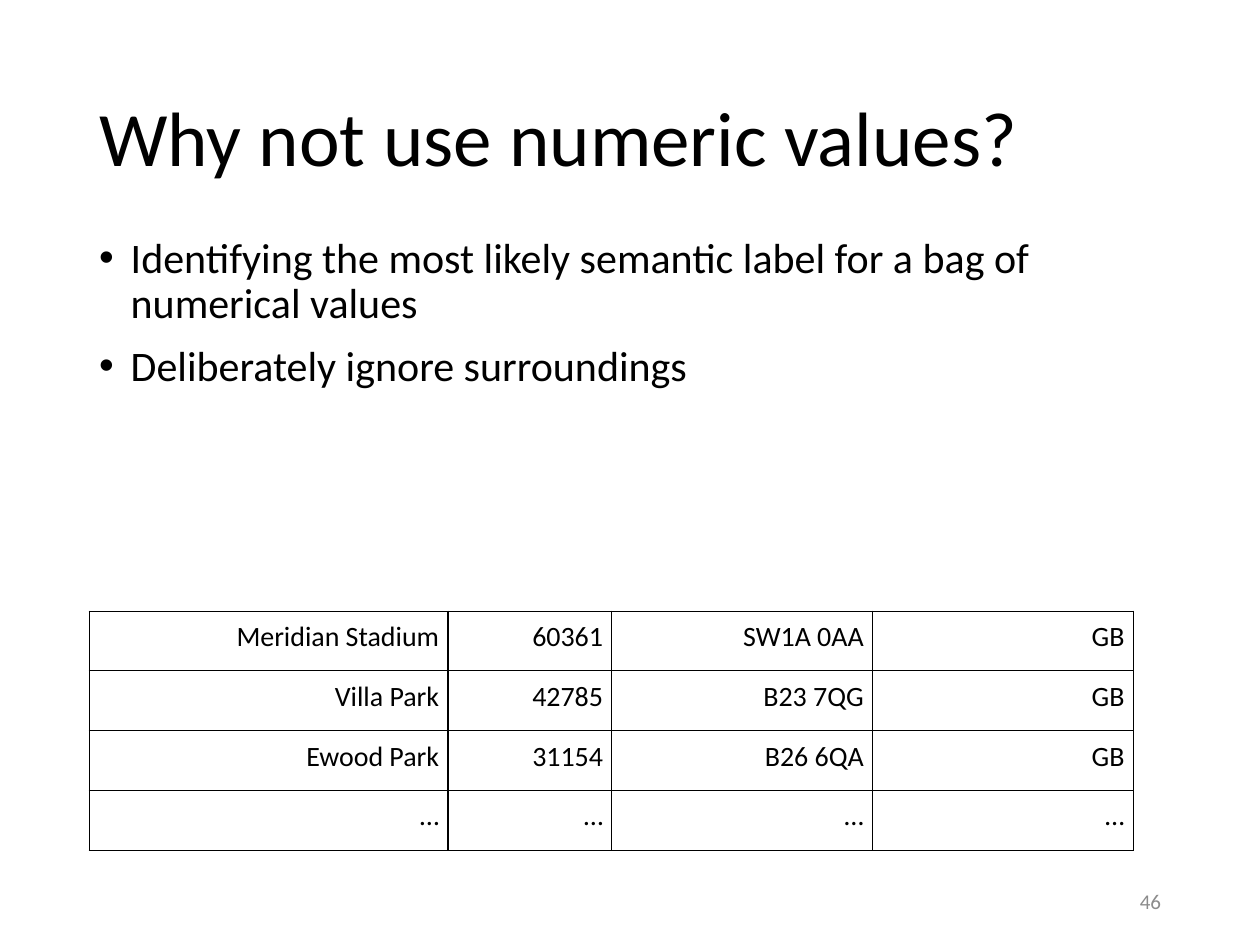
from lxml import etree
from pptx import Presentation
from pptx.dml.color import RGBColor
from pptx.enum.text import MSO_ANCHOR, PP_ALIGN
from pptx.oxml.ns import qn
from pptx.util import Pt

LEFT, RIGHT = PP_ALIGN.LEFT, PP_ALIGN.RIGHT
TOP, MIDDLE = MSO_ANCHOR.TOP, MSO_ANCHOR.MIDDLE

FONT = "Calibri"
COLORS = {"text": "000000", "number": "8C8C8C", "border": "000000"}
TITLE = "Why not use numeric values?"
BULLETS = [
    "Identifying the most likely semantic label for a bag of numerical values",
    "Deliberately ignore surroundings",
]
STADIUMS = [
    ("Meridian Stadium", "60361", "SW1A 0AA", "GB"),
    ("Villa Park", "42785", "B23 7QG", "GB"),
    ("Ewood Park", "31154", "B26 6QA", "GB"),
    ("…", "…", "…", "…"),
]
COLUMN_WIDTHS = [205, 93.6, 149, 149]
ROW_HEIGHT = 34.2
CELL_MARGIN = 5
BORDER_WIDTH = 0.75


def place(sp, left, top, width, height):
    sp.left, sp.top, sp.width, sp.height = map(Pt, (left, top, width, height))


def format_paragraph(p, size, color, align=LEFT):
    p.alignment = align
    for r in p.runs:
        r.font.name = FONT
        r.font.size = Pt(size)
        r.font.color.rgb = RGBColor.from_string(COLORS[color])


def add_bullet(p):
    pPr = p._p.get_or_add_pPr()
    pPr.set("marL", str(Pt(18)))
    pPr.set("indent", str(-Pt(18)))
    etree.SubElement(pPr, qn("a:buFont"), typeface="Arial")
    etree.SubElement(pPr, qn("a:buChar"), char="•")


def add_borders(cell):
    tcPr = cell._tc.get_or_add_tcPr()
    for side in ("lnL", "lnR", "lnT", "lnB"):
        ln = etree.SubElement(tcPr, qn(f"a:{side}"), w=str(Pt(BORDER_WIDTH)))
        fill = etree.SubElement(ln, qn("a:solidFill"))
        etree.SubElement(fill, qn("a:srgbClr"), val=COLORS["border"])


def add_title(s):
    sp = s.shapes.title
    place(sp, 49.5, 28.8, 621, 104.4)
    tf = sp.text_frame
    tf.text = TITLE
    tf.vertical_anchor = MIDDLE
    p = tf.paragraphs[0]
    p.line_spacing = 0.9
    format_paragraph(p, 44, "text")


def add_body(s):
    sp = s.placeholders[1]
    place(sp, 49.5, 131.8, 621, 101.5)
    tf = sp.text_frame
    tf.text = "\n".join(BULLETS)
    tf.vertical_anchor = TOP
    for i, p in enumerate(tf.paragraphs):
        add_bullet(p)
        p.line_spacing = 0.9
        p.space_before = Pt(10 if i else 0)
        format_paragraph(p, 24, "text")


def add_stadium_table(s):
    rows, cols = len(STADIUMS), len(COLUMN_WIDTHS)
    frame = s.shapes.add_table(rows, cols, Pt(51), Pt(349.2),
                               Pt(sum(COLUMN_WIDTHS)), Pt(rows * ROW_HEIGHT))
    table = frame.table
    table.first_row = table.horz_banding = False
    for column, width in zip(table.columns, COLUMN_WIDTHS):
        column.width = Pt(width)
    for row, values in zip(table.rows, STADIUMS):
        row.height = Pt(ROW_HEIGHT)
        for cell, value in zip(row.cells, values):
            cell.text = value
            cell.margin_left = cell.margin_right = Pt(CELL_MARGIN)
            cell.margin_top = cell.margin_bottom = Pt(CELL_MARGIN)
            add_borders(cell)
            cell.fill.background()
            format_paragraph(cell.text_frame.paragraphs[0], 16, "text", RIGHT)


def add_slide_number(s):
    sp = s.shapes.add_textbox(Pt(508.5), Pt(500.5), Pt(162), Pt(28.8))
    tf = sp.text_frame
    tf.word_wrap = True
    tf.text = "46"
    tf.vertical_anchor = MIDDLE
    format_paragraph(tf.paragraphs[0], 12, "number", RIGHT)


def main():
    """Build the slide on numeric values and save it."""
    prs = Presentation()
    prs.slide_width, prs.slide_height = Pt(720), Pt(540)
    s = prs.slides.add_slide(prs.slide_layouts[1])
    add_title(s)
    add_body(s)
    add_stadium_table(s)
    add_slide_number(s)
    prs.save("out.pptx")


if __name__ == "__main__":
    main()
